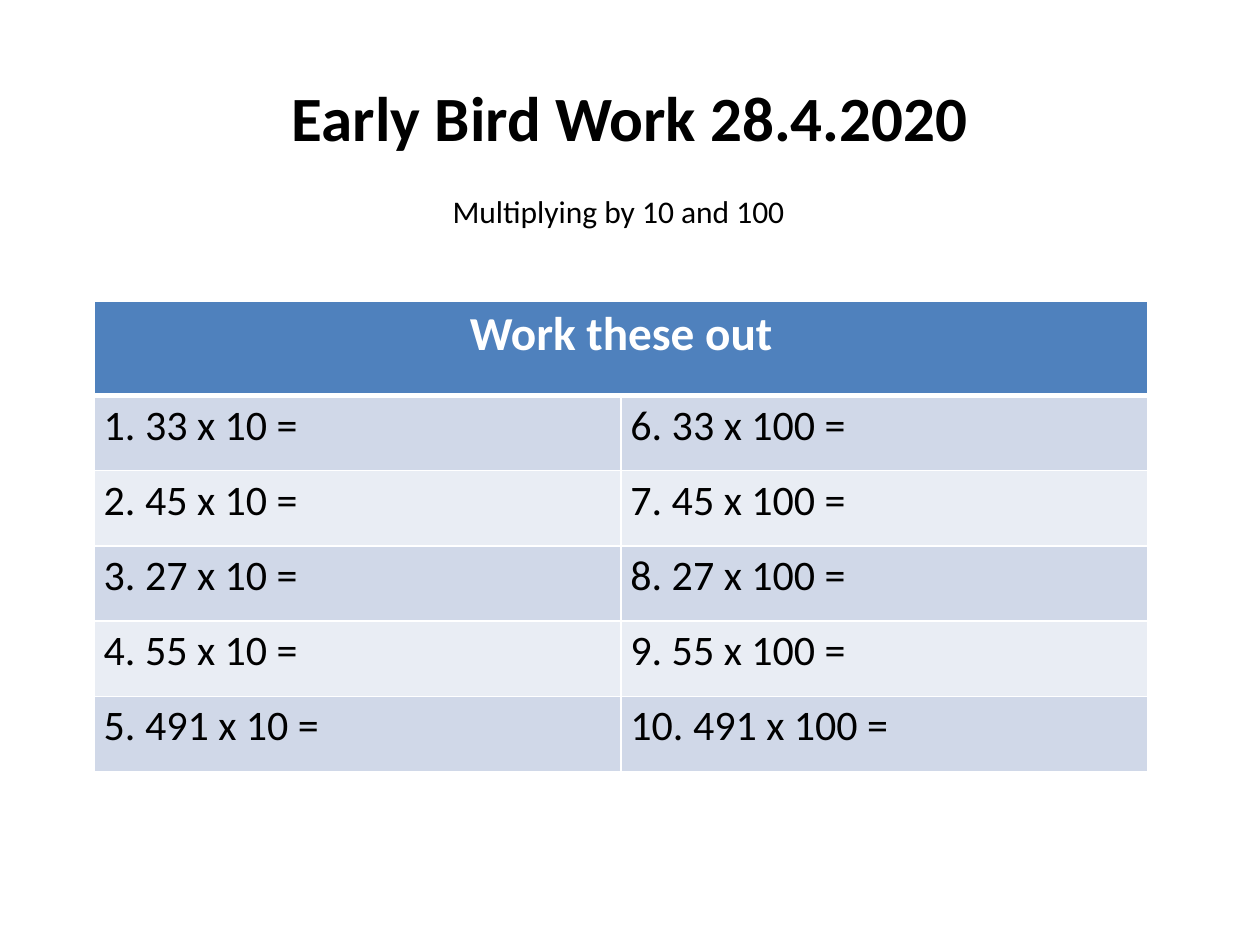
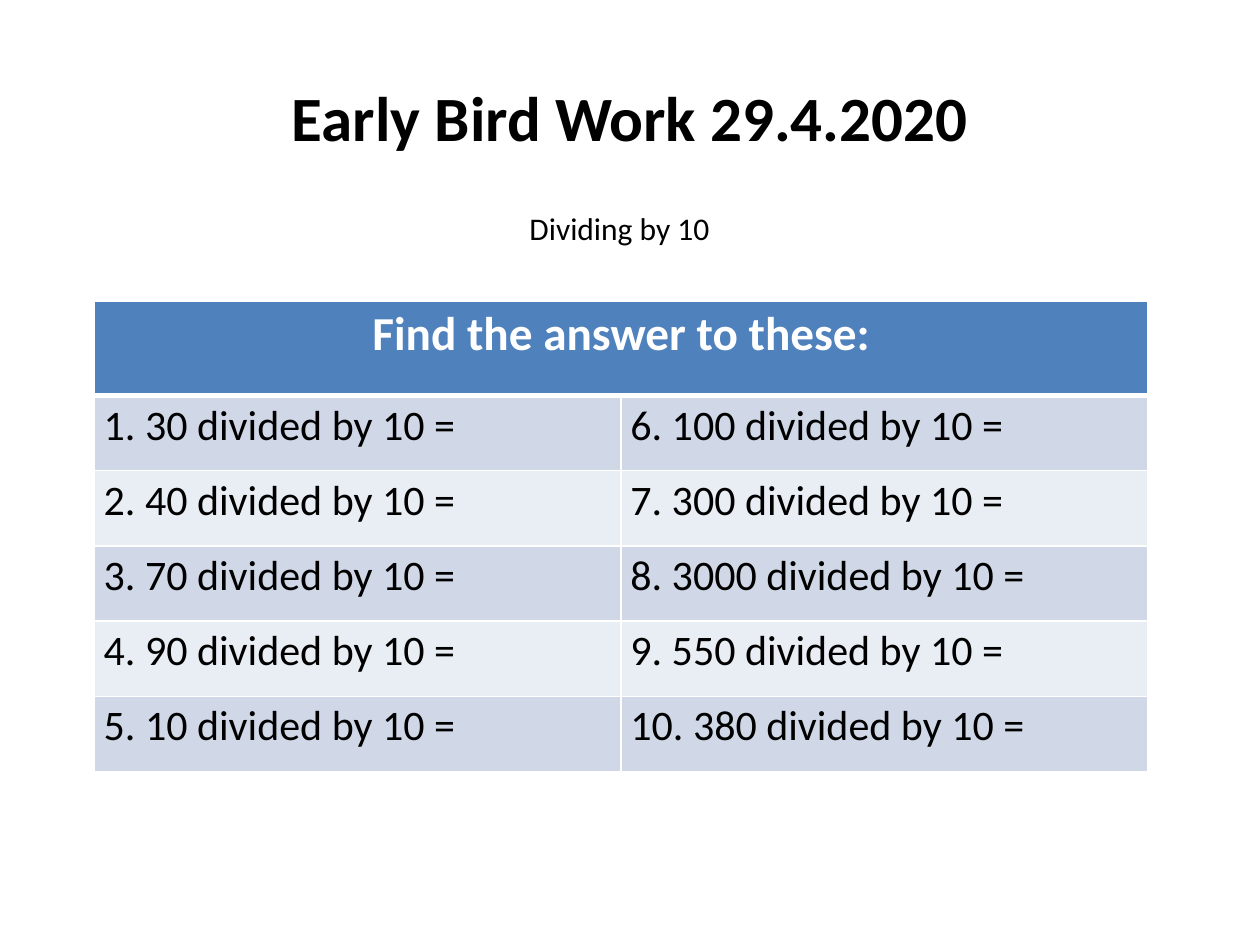
from lxml import etree
from pptx import Presentation
from pptx.dml.color import RGBColor
from pptx.enum import text
from pptx.oxml import ns
from pptx.util import Pt

COLOURS = {
    "ink": "000000",
    "paper": "FFFFFF",
    "header": "4F81BD",
    "dark_band": "D0D8E8",
    "light_band": "E9EDF4",
}
FONT = "Calibri"
CENTRE = text.PP_ALIGN.CENTER
LEFT = text.PP_ALIGN.LEFT

# Worksheet table, in points
TABLE_LEFT, TABLE_TOP, COLUMN_WIDTH = 54, 172, 301
HEADER_HEIGHT, ROW_HEIGHT = 54, 43

# Each day: title, topic, topic box (left, top, width), table heading, questions
DAYS = [
    ("Early Bird Work 28.4.2020", "Multiplying by 10 and 100", (251.5, 106, 206.5),
     "Work these out",
     [f"{number} x {factor}" for factor in (10, 100) for number in (33, 45, 27, 55, 491)]),
    ("Early Bird Work 29.4.2020", "Dividing by 10", (295.5, 116, 118.5),
     "Find the answer to these:",
     [f"{number} divided by 10"
      for number in (30, 40, 70, 90, 10, 100, 300, 3000, 550, 380)]),
]


class Worksheet:
    """Holds the style and the current slide."""

    def __init__(self):
        self.presentation = Presentation()
        self.presentation.slide_width = Pt(720)
        self.presentation.slide_height = Pt(540)
        self.slide = None

    def new_slide(self):
        self.slide = self.presentation.slides.add_slide(self.presentation.slide_layouts[6])

    def set_text(self, text_frame, content, size, colour="ink", bold=False, align=LEFT):
        text_frame.text = content
        paragraph = text_frame.paragraphs[0]
        paragraph.alignment = align
        font = paragraph.runs[0].font
        font.name, font.size, font.bold = FONT, Pt(size), bold
        font.color.rgb = RGBColor.from_string(COLOURS[colour])

    def text_box(self, content, left, top, width, height, size, wrap=True, **style):
        shape = self.slide.shapes.add_textbox(Pt(left), Pt(top), Pt(width), Pt(height))
        shape.text_frame.word_wrap = wrap
        self.set_text(shape.text_frame, content, size, **style)
        return shape

    def title(self, content):
        shape = self.text_box(content, 36, 21.6, 648, 90, 36, bold=True, align=CENTRE)
        shape.text_frame.vertical_anchor = text.MSO_ANCHOR.MIDDLE

    def topic(self, content, left, top, width):
        shape = self.text_box(content, left, top, width, 29, 18, wrap=False)
        shape.text_frame.auto_size = text.MSO_AUTO_SIZE.SHAPE_TO_FIT_TEXT

    def cell_style(self, cell, fill, top_border=1, bottom_border=1):
        cell.margin_left = cell.margin_right = Pt(5.25)
        cell.margin_top = cell.margin_bottom = Pt(2.7)
        cell.fill.solid()
        cell.fill.fore_color.rgb = RGBColor.from_string(COLOURS[fill])
        # Borders come before the fill in the cell properties
        properties = cell._tc.get_or_add_tcPr()
        borders = {"lnL": 1, "lnR": 1, "lnT": top_border, "lnB": bottom_border}
        for position, (side, width) in enumerate(borders.items()):
            line = etree.Element(ns.qn(f"a:{side}"), w=str(Pt(width)))
            solid = etree.SubElement(line, ns.qn("a:solidFill"))
            etree.SubElement(solid, ns.qn("a:srgbClr"), val=COLOURS["paper"])
            properties.insert(position, line)

    def question_table(self, heading, questions):
        half = len(questions) // 2
        frame = self.slide.shapes.add_table(
            half + 1, 2, Pt(TABLE_LEFT), Pt(TABLE_TOP),
            Pt(2 * COLUMN_WIDTH), Pt(HEADER_HEIGHT + half * ROW_HEIGHT))
        table = frame.table
        for column in table.columns:
            column.width = Pt(COLUMN_WIDTH)
        for index, row in enumerate(table.rows):
            row.height = Pt(ROW_HEIGHT if index else HEADER_HEIGHT)

        # Heading across both columns
        table.cell(0, 0).merge(table.cell(0, 1))
        for cell in table.rows[0].cells:
            self.cell_style(cell, "header", bottom_border=3)
        self.set_text(table.cell(0, 0).text_frame, heading, 27, "paper", True, CENTRE)

        # Questions run down the left column, then the right
        for index, question in enumerate(questions):
            column, row = divmod(index, half)
            cell = table.cell(row + 1, column)
            self.cell_style(cell, "light_band" if row % 2 else "dark_band",
                            top_border=1 if row else 3)
            self.set_text(cell.text_frame, f"{index + 1}. {question} =", 24)


def main():
    worksheet = Worksheet()
    for title, topic, topic_box, heading, questions in DAYS:
        worksheet.new_slide()
        worksheet.title(title)
        worksheet.question_table(heading, questions)
        worksheet.topic(topic, *topic_box)
    worksheet.presentation.save("out.pptx")


if __name__ == "__main__":
    main()
